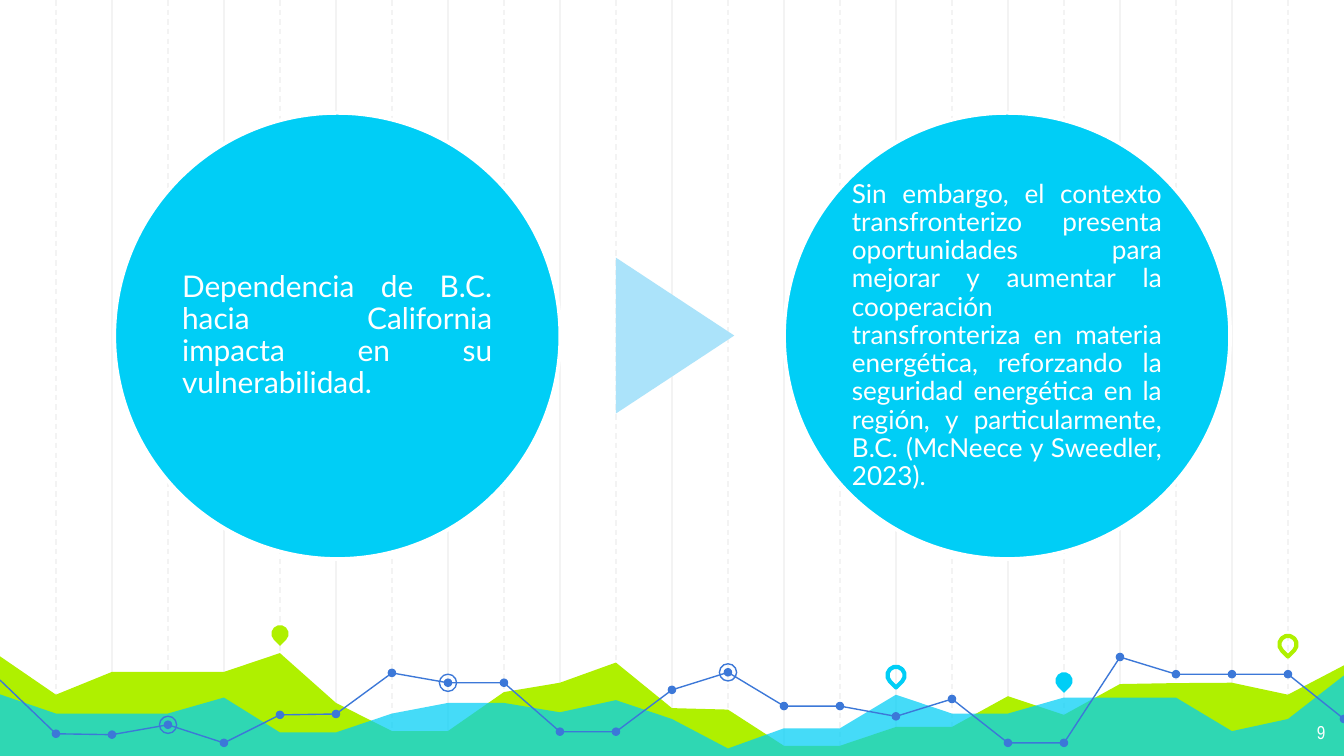
from dataclasses import dataclass
from typing import Optional

from pptx import Presentation
from pptx.dml.color import RGBColor
from pptx.enum.dml import MSO_LINE
from pptx.enum.shapes import MSO_CONNECTOR, MSO_SHAPE
from pptx.enum.text import MSO_ANCHOR, PP_ALIGN
from pptx.oxml.xmlchemy import OxmlElement
from pptx.util import Pt

OVAL, DROP, TRIANGLE = MSO_SHAPE.OVAL, MSO_SHAPE.TEAR, MSO_SHAPE.ISOSCELES_TRIANGLE
STRAIGHT, DASH = MSO_CONNECTOR.STRAIGHT, MSO_LINE.DASH
TOP, MIDDLE = MSO_ANCHOR.TOP, MSO_ANCHOR.MIDDLE
JUSTIFY, RIGHT = PP_ALIGN.JUSTIFY, PP_ALIGN.RIGHT


@dataclass(frozen=True)
class Theme:
    white: str = "FFFFFF"
    grid: str = "F3F3F3"
    lime: str = "AFF000"
    cyan: str = "00CEF6"
    pale_cyan: str = "ABE3FA"
    blue: str = "3C78D8"
    body_font: str = "Lato"
    number_font: str = "Arial Narrow"
    cause_size: float = 16
    outlook_size: float = 14
    number_size: float = 10


@dataclass(frozen=True)
class Pin:
    column: int
    y: float
    color: str
    hollow: bool


@dataclass(frozen=True)
class Idea:
    left: float
    text: str
    size: float


THEME = Theme()
WIDTH, HEIGHT = 720, 405
COLUMN = 30
BASE = 407
BLEED = 1.5
DOT, MARKER = 4.6, 9.2
CIRCLE_TOP, CIRCLE, TEXT_SIDE = 60.5, 239, 169

# Heights at each grid column, from the left edge to the right edge
LIME_RIDGE = [350.6, 372.2, 360, 360, 360, 349.9, 376.6, 391.7, 391.7, 370.8,
              365.8, 355, 379.4, 380.2, 399.6, 399.6, 389.5, 389.5, 373, 383,
              366.5, 366, 365.8, 372.2, 355.7]
CYAN_RIDGE = [371.5, 382.3, 382.3, 382.3, 373.7, 392.4, 392.4, 382.3, 376.6, 376.6,
              381.6, 375.1, 385.2, 401, 390.2, 390.2, 372.2, 382.3, 382.3, 373.7,
              373.7, 373.7, 391.7, 385.2, 360.7]
TREND = [364.3, 393.1, 393.6, 388.3, 398, 383, 382.5, 360.5, 365.8, 365.8,
         392, 392, 369.6, 360.2, 378.3, 378.3, 383.8, 374.5, 398, 398,
         352, 361.2, 361.2, 361.2, 385.2]
TREND_BREAKS = [0, 11, 20, 24]
RINGED_COLUMNS = [3, 8, 13]

PINS = [
    Pin(5, 339.5, THEME.lime, False),
    Pin(16, 361.8, THEME.cyan, True),
    Pin(19, 364.7, THEME.cyan, False),
    Pin(23, 345.2, THEME.lime, True),
]
IDEAS = [
    Idea(61.2, "Dependencia de B.C. hacia California impacta en su vulnerabilidad.",
         THEME.cause_size),
    Idea(420, "Sin embargo, el contexto transfronterizo presenta oportunidades para "
         "mejorar y aumentar la cooperación transfronteriza en materia energética, "
         "reforzando la seguridad energética en la región, y particularmente, "
         "B.C. (McNeece y Sweedler, 2023).", THEME.outlook_size),
]


def paint(shape, fill: Optional[str] = None, line: Optional[str] = None,
          weight: float = 0.75, opacity: int = 100) -> None:
    shape.shadow.inherit = False
    if fill:
        shape.fill.solid()
        shape.fill.fore_color.rgb = RGBColor.from_string(fill)
        if opacity < 100:
            alpha = OxmlElement("a:alpha")
            alpha.set("val", str(opacity * 1000))
            shape.fill._xPr.solidFill[0].append(alpha)
    else:
        shape.fill.background()
    if line:
        shape.line.color.rgb = RGBColor.from_string(line)
        shape.line.width = Pt(weight)
    else:
        shape.line.fill.background()


def add_preset(slide, kind, left: float, top: float, width: float, height: float,
               rotation: float = 0, **style) -> None:
    shape = slide.shapes.add_shape(kind, Pt(left), Pt(top), Pt(width), Pt(height))
    shape.rotation = rotation
    paint(shape, **style)


def add_marker(slide, kind, x: float, y: float, side: float, **style) -> None:
    add_preset(slide, kind, x - side / 2, y - side / 2, side, side, **style)


def add_path(slide, points: list[tuple[float, float]], closed: bool, **style) -> None:
    corners = [(Pt(x), Pt(y)) for x, y in points]
    builder = slide.shapes.build_freeform(*corners[0], scale=1.0)
    builder.add_line_segments(corners[1:], close=closed)
    paint(builder.convert_to_shape(), **style)


def add_ridge(slide, heights: list[float], **style) -> None:
    crest = [(i * COLUMN, y) for i, y in enumerate(heights)]
    crest[0] = (-BLEED, heights[0])
    crest[-1] = (WIDTH + BLEED, heights[-1])
    add_path(slide, crest + [(WIDTH + BLEED, BASE), (-BLEED, BASE)], True, **style)


def add_grid_line(slide, column: int) -> None:
    x = Pt(column * COLUMN)
    line = slide.shapes.add_connector(STRAIGHT, x, Pt(0), x, Pt(BASE))
    line.line.color.rgb = RGBColor.from_string(THEME.grid)
    line.line.width = Pt(0.75)
    if column % 2:
        line.line.dash_style = DASH
    line._element.spPr.append(OxmlElement("a:effectLst"))


def add_text(slide, text: str, left: float, top: float, width: float, height: float, *,
             font: str, size: float, align, anchor, inset: float,
             spacing: float = 1.0) -> None:
    frame = slide.shapes.add_textbox(Pt(left), Pt(top), Pt(width), Pt(height)).text_frame
    frame.word_wrap = True
    frame.vertical_anchor = anchor
    frame.margin_left = frame.margin_right = Pt(inset)
    frame.margin_top = frame.margin_bottom = Pt(inset)
    paragraph = frame.paragraphs[0]
    paragraph.alignment = align
    paragraph.line_spacing = spacing
    run = paragraph.add_run()
    run.text = text
    run.font.name = font
    run.font.size = Pt(size)
    run.font.color.rgb = RGBColor.from_string(THEME.white)


def main() -> None:
    deck = Presentation()
    deck.slide_width, deck.slide_height = Pt(WIDTH), Pt(HEIGHT)
    slide = deck.slides.add_slide(deck.slide_layouts[6])

    # Background grid
    for column in range(1, WIDTH // COLUMN):
        add_grid_line(slide, column)

    # Landscape and pins
    add_ridge(slide, LIME_RIDGE, fill=THEME.lime)
    add_ridge(slide, CYAN_RIDGE, fill=THEME.cyan, opacity=73)
    for pin in PINS:
        style = {"line": pin.color, "weight": 2.25} if pin.hollow else {"fill": pin.color}
        add_marker(slide, DROP, pin.column * COLUMN, pin.y, MARKER, rotation=135, **style)

    # Trend line with its dots and rings
    trend = [(i * COLUMN, y) for i, y in enumerate(TREND)]
    for first, last in zip(TREND_BREAKS, TREND_BREAKS[1:]):
        add_path(slide, trend[first:last + 1], False, line=THEME.blue)
    for x, y in trend[1:]:
        add_marker(slide, OVAL, x, y, DOT, fill=THEME.blue)
    for column in RINGED_COLUMNS:
        add_marker(slide, OVAL, *trend[column], MARKER, line=THEME.blue)

    # Two ideas joined by a triangle
    add_preset(slide, TRIANGLE, 319.9, 148.1, 83.5, 63.4, rotation=90, fill=THEME.pale_cyan)
    margin = (CIRCLE - TEXT_SIDE) / 2
    for idea in IDEAS:
        add_preset(slide, OVAL, idea.left, CIRCLE_TOP, CIRCLE, CIRCLE,
                   fill=THEME.cyan, line=THEME.white, weight=2)
        add_text(slide, idea.text, idea.left + margin, CIRCLE_TOP + margin,
                 TEXT_SIDE, TEXT_SIDE, font=THEME.body_font, size=idea.size,
                 align=JUSTIFY, anchor=MIDDLE, inset=1.4, spacing=0.9)

    # Slide number
    add_text(slide, "9", 674, 380, 43, 25, font=THEME.number_font,
             size=THEME.number_size, align=RIGHT, anchor=TOP, inset=7.2)

    deck.save("out.pptx")


if __name__ == "__main__":
    main()
